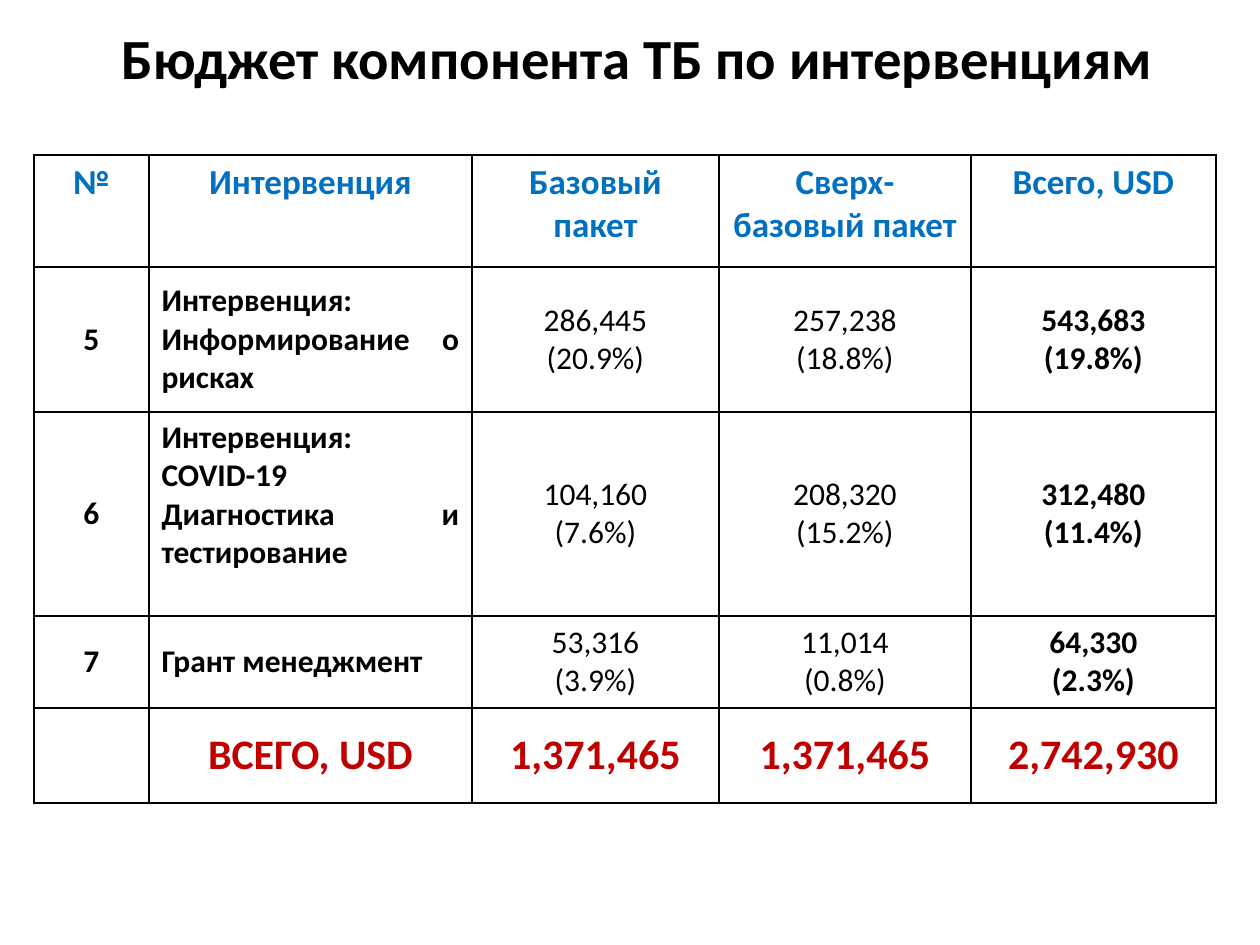
import pptx
import pptx.util
import pptx.dml.color
import pptx.enum.text
import pptx.oxml.ns
import lxml.etree

PX = 914400 / 126
ALIGN = pptx.enum.text.PP_ALIGN
ANCHOR = pptx.enum.text.MSO_ANCHOR


def px(n):
    return pptx.util.Emu(round(n * PX))


def add_run(p, text, size, color, bold):
    r = p.add_run()
    r.text = text
    r.font.name = "Calibri"
    r.font.size = pptx.util.Pt(size)
    r.font.bold = bold
    r.font.color.rgb = pptx.dml.color.RGBColor.from_string(color)


prs = pptx.Presentation()
prs.slide_width = px(1260)
prs.slide_height = px(945)
s = prs.slides.add_slide(prs.slide_layouts[6])

title = s.shapes.add_textbox(px(94), px(16), px(1086), px(90))
tf = title.text_frame
tf.word_wrap = True
tf.vertical_anchor = ANCHOR.MIDDLE
p = tf.paragraphs[0]
p.alignment = ALIGN.CENTER
p.line_spacing = 0.9
add_run(p, "Бюджет компонента ТБ по интервенциям", 32.4, "000000", True)

rows = [
    ["№", "Интервенция", "Базовый пакет", "Сверх-базовый пакет", "Всего, USD"],
    ["5", "Интервенция: Информирование о рисках",
     "286,445\n(20.9%)", "257,238\n(18.8%)", "543,683\n(19.8%)"],
    ["6", "Интервенция: COVID-19 Диагностика и тестирование",
     "104,160\n(7.6%)", "208,320\n(15.2%)", "312,480\n(11.4%)"],
    ["7", "Грант менеджмент",
     "53,316\n(3.9%)", "11,014\n(0.8%)", "64,330\n(2.3%)"],
    ["", "ВСЕГО, USD", "1,371,465", "1,371,465", "2,742,930"],
]
widths = [115, 323, 247, 252, 245]
heights = [112, 145, 204, 92, 95]
last = len(rows) - 1

frame = s.shapes.add_table(len(rows), len(widths), px(34), px(155),
                           px(sum(widths)), px(sum(heights)))
table = frame.table
table.first_row = False
table.horz_banding = False
for column, width in zip(table.columns, widths):
    column.width = px(width)
for row, height in zip(table.rows, heights):
    row.height = px(height)

for i, texts in enumerate(rows):
    size, color = {0: (20, "0070C0"), last: (24, "C00000")}.get(i, (18, "000000"))
    body = 0 < i < last
    for j, text in enumerate(texts):
        cell = table.cell(i, j)
        cell.vertical_anchor = ANCHOR.TOP if i == 0 else ANCHOR.MIDDLE
        tcPr = cell._tc.get_or_add_tcPr()
        for side in ("a:lnL", "a:lnR", "a:lnT", "a:lnB"):
            ln = lxml.etree.SubElement(tcPr, pptx.oxml.ns.qn(side), w="12700")
            fill = lxml.etree.SubElement(ln, pptx.oxml.ns.qn("a:solidFill"))
            lxml.etree.SubElement(fill, pptx.oxml.ns.qn("a:srgbClr"), val="000000")
        cell.fill.background()
        if not text:
            continue
        tf = cell.text_frame
        for k, line in enumerate(text.split("\n")):
            p = tf.paragraphs[0] if k == 0 else tf.add_paragraph()
            p.alignment = ALIGN.JUSTIFY if body and j == 1 else ALIGN.CENTER
            add_run(p, line, size, color, not (body and j in (2, 3)))

table.cell(2, 1).margin_bottom = px(44)

prs.save("out.pptx")
